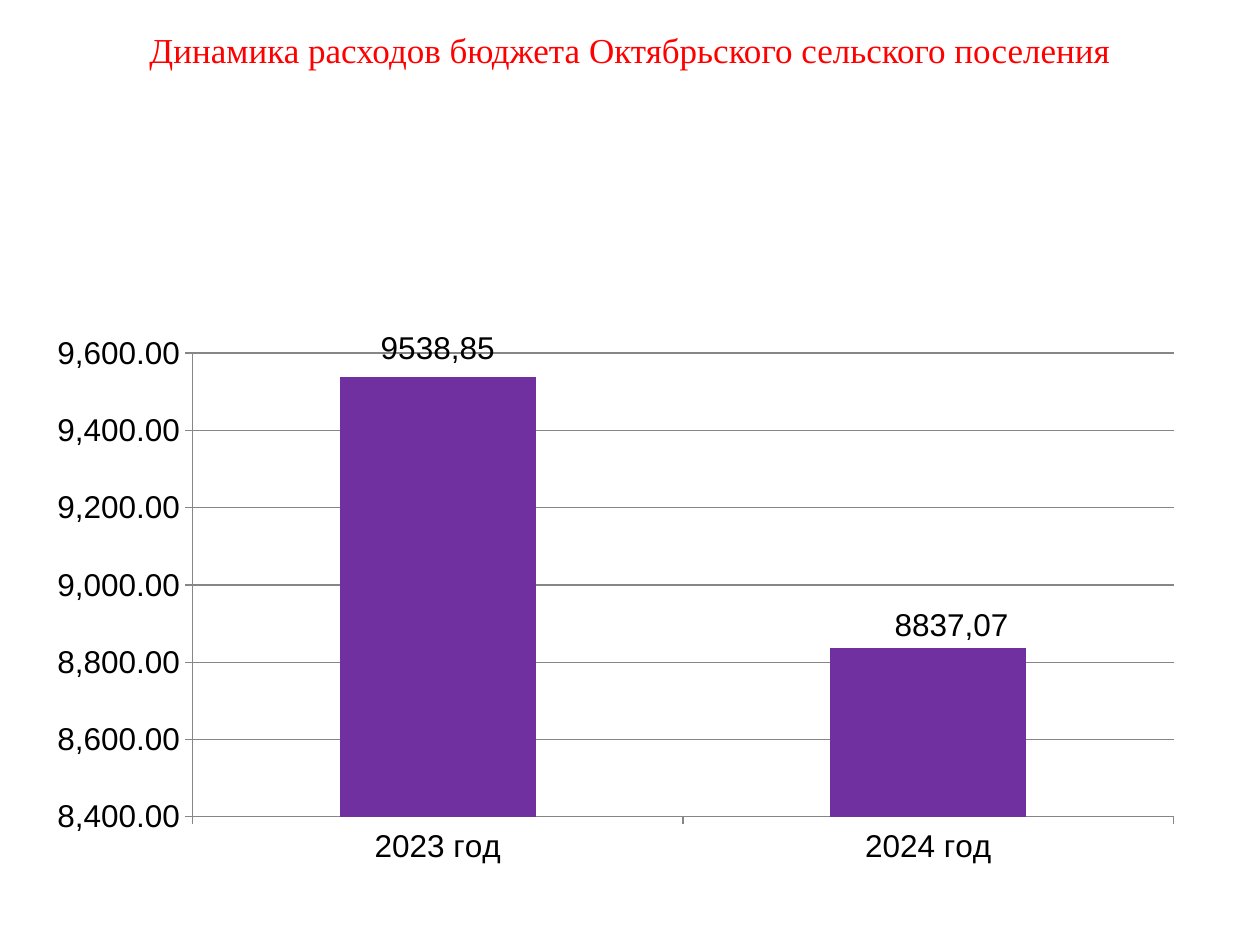
from lxml import etree
from pptx import Presentation
from pptx.chart.data import CategoryChartData
from pptx.dml.color import RGBColor
from pptx.enum.chart import XL_CHART_TYPE, XL_LABEL_POSITION, XL_TICK_MARK
from pptx.enum.text import MSO_ANCHOR, PP_ALIGN
from pptx.oxml.ns import qn
from pptx.util import Pt

RED = RGBColor(0xFF, 0x00, 0x00)
PURPLE = RGBColor(0x70, 0x30, 0xA0)
GRAY = RGBColor(0x86, 0x86, 0x86)
BLACK = RGBColor(0x00, 0x00, 0x00)
COLUMN = XL_CHART_TYPE.COLUMN_CLUSTERED
OUTSIDE_END = XL_LABEL_POSITION.OUTSIDE_END
TICK_OUT = XL_TICK_MARK.OUTSIDE
TOP = MSO_ANCHOR.TOP
CENTER = PP_ALIGN.CENTER

TITLE = "Динамика расходов бюджета Октябрьского сельского поселения"
EXPENSES = {"2023 год": 9538.85, "2024 год": 8837.07}
LABELS = [("9538,85", {"x": 0, "y": -0.01}), ("8837,07", {"x": 0.02, "y": 0})]
PLOT_LAYOUT = {"layoutTarget": "inner", "xMode": "edge", "yMode": "edge",
               "x": 0.14, "y": 0.05, "w": 0.84, "h": 0.84}
NUMBER_FORMAT = "#,##0.00"


def set_attrs(obj, values):
    for name, value in values.items():
        setattr(obj, name, value)


def set_font(font, name, size, color):
    set_attrs(font, {"name": name, "size": Pt(size), "bold": False})
    font.color.rgb = color


def set_layout(parent, index, values):
    for old in parent.findall(qn("c:layout")):
        parent.remove(old)
    layout = etree.Element(qn("c:layout"))
    manual = etree.SubElement(layout, qn("c:manualLayout"))
    for name, value in values.items():
        etree.SubElement(manual, qn(f"c:{name}")).set("val", str(value))
    parent.insert(index, layout)


def add_title(s, text):
    tf = s.shapes.add_textbox(Pt(36), Pt(11.5), Pt(648), Pt(78.5)).text_frame
    set_attrs(tf, {"word_wrap": True, "vertical_anchor": TOP, "margin_top": Pt(4.5)})
    p = tf.paragraphs[0]
    p.alignment = CENTER
    r = p.add_run()
    r.text = text
    set_font(r.font, "Times New Roman", 20, RED)


def format_axis(axis):
    axis.major_tick_mark = TICK_OUT
    axis.format.line.color.rgb = GRAY


def add_labels(series):
    for i, (text, offset) in enumerate(LABELS):
        label = series.points[i].data_label
        r = label.text_frame.paragraphs[0].add_run()
        r.text = text
        set_font(r.font, "Arial", 18, BLACK)
        label.position = OUTSIDE_END
    for element, (text, offset) in zip(series.data_labels._element.findall(qn("c:dLbl")), LABELS):
        set_layout(element, 1, offset)
    set_attrs(series.data_labels, {"show_value": True, "number_format": NUMBER_FORMAT,
                                   "number_format_is_linked": False})


def add_expense_chart(s):
    data = CategoryChartData(number_format=NUMBER_FORMAT)
    data.categories = list(EXPENSES)
    data.add_series("Series 1", list(EXPENSES.values()))
    chart = s.shapes.add_chart(COLUMN, Pt(16.5), Pt(186), Pt(667.5), Pt(315.5), data).chart
    set_attrs(chart, {"has_legend": False, "has_title": False})
    set_font(chart.font, "Arial", 18, BLACK)
    set_layout(chart.element.find(".//" + qn("c:plotArea")), 0, PLOT_LAYOUT)

    for axis in (chart.category_axis, chart.value_axis):
        format_axis(axis)
    set_attrs(chart.value_axis, {"minimum_scale": 8400, "maximum_scale": 9600,
                                 "major_unit": 200, "has_major_gridlines": True})
    chart.value_axis.major_gridlines.format.line.color.rgb = GRAY
    set_attrs(chart.value_axis.tick_labels, {"number_format": NUMBER_FORMAT,
                                             "number_format_is_linked": False})

    plot = chart.plots[0]
    set_attrs(plot, {"gap_width": 150, "vary_by_categories": False})
    series = plot.series[0]
    series.format.fill.solid()
    series.format.fill.fore_color.rgb = PURPLE
    add_labels(series)


def main():
    prs = Presentation()
    set_attrs(prs, {"slide_width": Pt(720), "slide_height": Pt(540)})
    s = prs.slides.add_slide(prs.slide_layouts[6])
    add_title(s, TITLE)
    add_expense_chart(s)
    prs.save("out.pptx")


if __name__ == "__main__":
    main()
